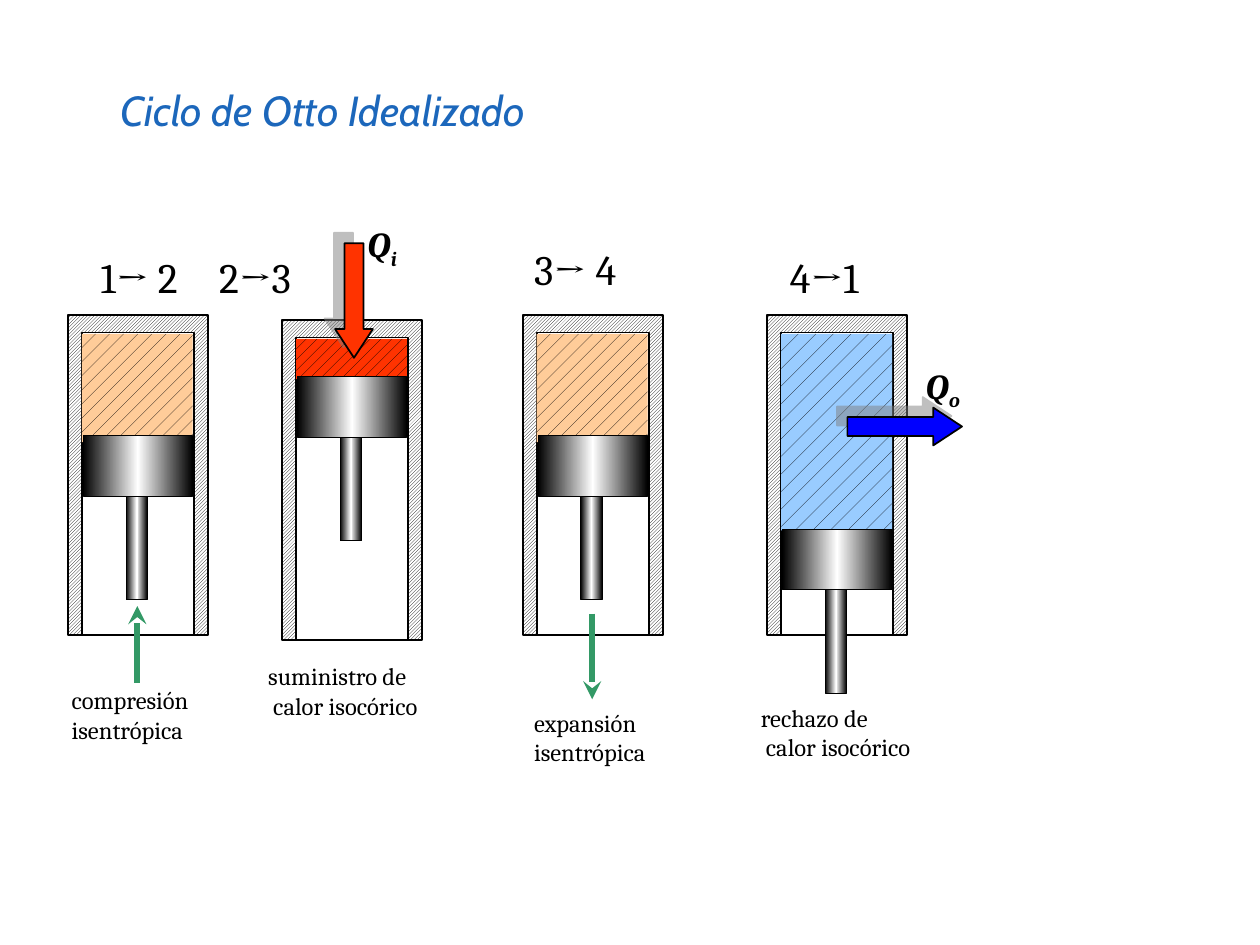
import copy

import lxml.etree
import pptx
import pptx.dml.color
import pptx.enum.dml
import pptx.enum.shapes
import pptx.enum.text
import pptx.oxml
import pptx.oxml.ns
import pptx.util

Inches = pptx.util.Inches
Pt = pptx.util.Pt
RGBColor = pptx.dml.color.RGBColor
Shape = pptx.enum.shapes.MSO_SHAPE
Pattern = pptx.enum.dml.MSO_PATTERN
qn = pptx.oxml.ns.qn

BLACK = RGBColor(0x00, 0x00, 0x00)
WHITE = RGBColor(0xFF, 0xFF, 0xFF)
TITLE_BLUE = RGBColor(0x1C, 0x67, 0xBB)
PEACH = RGBColor(0xFF, 0xCC, 0x99)
HOT_RED = RGBColor(0xFF, 0x33, 0x00)
COLD_BLUE = RGBColor(0x99, 0xCC, 0xFF)
HEAT_BLUE = RGBColor(0x00, 0x00, 0xFF)
GREEN = RGBColor(0x33, 0x99, 0x66)

TITLE = "Ciclo de Otto Idealizado"
STAGES = [
    {"cylinder": (0.54, 2.5), "piston": 3.46, "gas": (PEACH, Pattern.PERCENT_10, 0.86),
     "work": (5.42, 4.81),
     "caption": (0.47, 5.39, 1.2, ["compresión", "isentrópica"], 0)},
    {"cylinder": (2.24, 2.54), "piston": 2.99, "gas": (HOT_RED, Pattern.PERCENT_20, 0.32),
     "heat": (2.66, 1.93, 0, HOT_RED), "symbol": (2.82, 1.72, 0.47, "i"),
     "caption": (2.03, 5.2, 1.49, ["suministro de", "calor isocórico"], 0.04)},
    {"cylinder": (4.15, 2.5), "piston": 3.46, "gas": (PEACH, Pattern.PERCENT_10, 0.86),
     "work": (4.87, 5.55),
     "caption": (4.14, 5.57, 1.14, ["expansión", "isentrópica"], 0)},
    {"cylinder": (6.09, 2.5), "piston": 4.2, "gas": (COLD_BLUE, Pattern.PERCENT_5, 1.56),
     "heat": (7.03, 2.93, 270, HEAT_BLUE), "symbol": (7.25, 2.84, 0.53, "o"),
     "caption": (5.94, 5.53, 1.49, ["rechazo de", "calor isocórico"], 0.04)},
]
STEPS = [
    (0.7, 1.95, 1.02, "1→ 2"),
    (1.64, 1.95, 1.02, "2→3"),
    (4.14, 1.88, 1.09, "3→ 4"),
    (6.17, 1.95, 1.09, "4→1"),
]


def add_block(shapes, x, y, w, h, line=None, kind=Shape.RECTANGLE):
    sp = shapes.add_shape(kind, Inches(x), Inches(y), Inches(w), Inches(h))
    sp.shadow.inherit = False
    if line:
        sp.line.color.rgb = BLACK
        sp.line.width = Pt(line)
    else:
        sp.line.fill.background()
    return sp


def fill_solid(sp, color):
    sp.fill.solid()
    sp.fill.fore_color.rgb = color


def fill_pattern(sp, pattern, back):
    sp.fill.patterned()
    sp.fill.pattern = pattern
    sp.fill.fore_color.rgb = BLACK
    sp.fill.back_color.rgb = back


def fill_metal(sp):
    sp.fill.gradient()
    sp.fill.gradient_angle = 0
    stops = sp._element.spPr.find(".//" + qn("a:gsLst"))
    stops.insert(1, copy.deepcopy(stops[0]))
    for stop, position, color in zip(sp.fill.gradient_stops, (0, 0.5, 1), (BLACK, WHITE, BLACK)):
        stop.position = position
        stop.color.rgb = color


def add_shadow(sp):
    effects = sp._element.spPr.find(qn("a:effectLst"))
    shadow = lxml.etree.SubElement(effects, qn("a:outerShdw"), dist=str(Pt(8.5)),
                                   dir=str(225 * 60000), algn="ctr", rotWithShape="0")
    color = lxml.etree.SubElement(shadow, qn("a:srgbClr"), val="808080")
    lxml.etree.SubElement(color, qn("a:alpha"), val="50000")


def add_text(shapes, x, y, w, h, lines, size, wrap=False):
    sp = shapes.add_textbox(Inches(x), Inches(y), Inches(w), Inches(h))
    tf = sp.text_frame
    tf.word_wrap = wrap
    tf.auto_size = pptx.enum.text.MSO_AUTO_SIZE.SHAPE_TO_FIT_TEXT
    tf.text = "\n".join(lines)
    for p in tf.paragraphs:
        p.font.name = "Cambria"
        p.font.size = Pt(size)
        p.font.color.rgb = BLACK
    return tf


def add_work_arrow(shapes, x, start, end):
    cx = shapes.add_connector(pptx.enum.shapes.MSO_CONNECTOR.STRAIGHT,
                              Inches(x), Inches(start), Inches(x), Inches(end))
    cx.line.color.rgb = GREEN
    cx.line.width = Pt(3.5)
    lxml.etree.SubElement(cx.line._get_or_add_ln(), qn("a:tailEnd"), type="stealth")
    lxml.etree.SubElement(cx._element.spPr, qn("a:effectLst"))


def add_stage(slide, stage):
    shapes = slide.shapes.add_group_shape().shapes
    x, y = stage["cylinder"]
    piston = stage["piston"]
    color, pattern, height = stage["gas"]
    fill_pattern(add_block(shapes, x, y, 1.11, 2.54, 1), Pattern.LIGHT_UPWARD_DIAGONAL, WHITE)
    fill_solid(add_block(shapes, x + 0.11, y + 0.14, 0.89, 2.4, 1), WHITE)
    fill_pattern(add_block(shapes, x + 0.11, y + 0.15, 0.88, height), pattern, color)
    fill_metal(add_block(shapes, x + 0.46, piston + 0.41, 0.17, 0.89, 0.5))
    fill_metal(add_block(shapes, x + 0.12, piston, 0.87, 0.48, 0.5))
    if "work" in stage:
        add_work_arrow(shapes, x + 0.55, *stage["work"])
    if "heat" in stage:
        left, top, rotation, color = stage["heat"]
        sp = add_block(shapes, left, top, 0.3, 0.91, 1, Shape.DOWN_ARROW)
        sp.adjustments[0], sp.adjustments[1] = 0.5, 0.76
        sp.rotation = rotation
        fill_solid(sp, color)
        add_shadow(sp)
        left, top, width, index = stage["symbol"]
        p = add_text(shapes, left, top, width, 0.43, ["Q"], 20).paragraphs[0]
        p.font.bold = p.font.italic = True
        r = p.add_run()
        r.text = index
        r.font._element.set("baseline", "-25000")
    left, top, width, lines, indent = stage["caption"]
    tf = add_text(shapes, left, top, width, 0.57, lines, 14)
    if indent:
        tf.paragraphs[1]._p.get_or_add_pPr().set("marL", str(Inches(indent)))


def add_title(slide):
    sp = slide.shapes.title
    sp.left, sp.top, sp.width, sp.height = Inches(0.86), Inches(0.62), Inches(6.64), Inches(0.51)
    tf = sp.text_frame
    tf.text = TITLE
    tf.vertical_anchor = pptx.enum.text.MSO_ANCHOR.TOP
    p = tf.paragraphs[0]
    p.alignment = pptx.enum.text.PP_ALIGN.LEFT
    p.font.name = "Cabin"
    p.font.size = Pt(24)
    p.font.italic = True
    p.font.color.rgb = TITLE_BLUE


def main():
    prs = pptx.Presentation()
    prs.slide_width, prs.slide_height = Inches(10), Inches(7.5)
    slide = prs.slides.add_slide(prs.slide_layouts[5])
    add_title(slide)
    for stage in STAGES:
        add_stage(slide, stage)
    for x, y, w, label in STEPS:
        add_text(slide.shapes, x, y, w, 0.51, [label], 24, wrap=True)
    prs.save("out.pptx")


if __name__ == "__main__":
    main()
